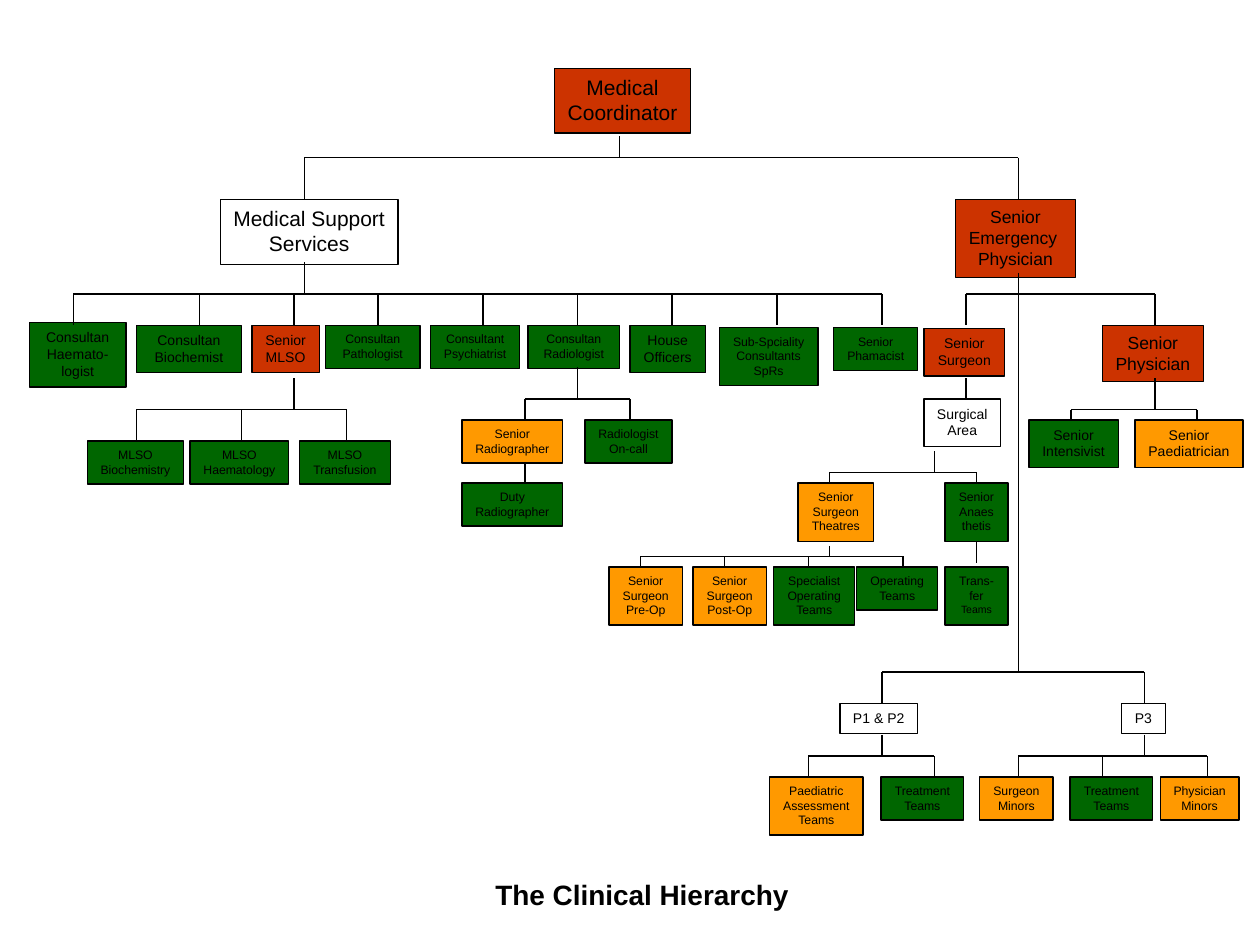
"""Build the clinical hierarchy chart on a grid of 120 columns and 90 rows."""
from lxml import etree
from pptx import Presentation, util as u
from pptx.dml.color import RGBColor
from pptx.enum import shapes, text
from pptx.oxml.ns import qn

COLUMNS, ROWS = 120, 90
BLACK, RED, GREEN, ORANGE = "000000", "CC3300", "006600", "FF9900"
LINE_ROWS, PADDING_ROWS = 0.207, 1.2

presentation = Presentation()
presentation.slide_width, presentation.slide_height = u.Inches(10), u.Inches(7.5)
slide = presentation.slides.add_slide(presentation.slide_layouts[6])
column = presentation.slide_width / COLUMNS
row = presentation.slide_height / ROWS


def color(code):
    return RGBColor.from_string(code)


def write(shape, words, size, wrap, alignment, bold=False):
    frame = shape.text_frame
    frame.text = words
    frame_format = {
        "word_wrap": wrap,
        "auto_size": text.MSO_AUTO_SIZE.SHAPE_TO_FIT_TEXT,
        "vertical_anchor": text.MSO_ANCHOR.TOP,
    }
    for name, value in frame_format.items():
        setattr(frame, name, value)
    for paragraph in frame.paragraphs:
        paragraph.alignment = alignment
        font = paragraph.runs[0].font
        font.color.rgb = color(BLACK)
        for name, value in {"name": "Arial", "size": u.Pt(size), "bold": bold}.items():
            setattr(font, name, value)


boxes = {
    (RED, 12): [(52.8, 6.5, 13, "Medical\nCoordinator")],
    (None, 12): [(21, 19, 16.9, "Medical Support\nServices")],
    (RED, 10): [
        (91, 19, 11.4, "Senior\nEmergency \nPhysician"),
        (105, 31, 9.6, "Senior\nPhysician"),
    ],
    (RED, 8): [(24, 31, 6.4, "Senior\nMLSO"), (88, 31.3, 7.7, "Senior\nSurgeon")],
    (GREEN, 8): [
        (2.8, 30.7, 9.2, "Consultan\nHaemato-logist"),
        (13, 31, 10, "Consultan\nBiochemist"),
        (60, 31, 7.2, "House\nOfficers"),
        (98, 40, 8.5, "Senior\nIntensivist"),
    ],
    (ORANGE, 8): [(108.1, 40, 10.3, "Senior\nPaediatrician")],
    (None, 8): [
        (88, 38, 7.3, "Surgical\nArea"),
        (80, 67, 7.4, "P1 & P2"),
        (106.8, 67, 4.2, "P3"),
    ],
    (ORANGE, 7): [
        (44, 40, 9.6, "Senior\nRadiographer"),
        (76, 46, 7.2, "Senior\nSurgeon\nTheatres"),
        (58, 54, 7, "Senior\nSurgeon\nPre-Op"),
        (66, 54, 7, "Senior\nSurgeon\nPost-Op"),
        (73.3, 74, 8.9, "Paediatric\nAssessment\nTeams"),
        (93.3, 74, 7, "Surgeon\nMinors"),
        (110.5, 74, 7.5, "Physician\nMinors"),
    ],
    (GREEN, 7): [
        (31, 31, 9, "Consultan\nPathologist"),
        (41, 31, 8.5, "Consultant\nPsychiatrist"),
        (50.3, 31, 8.7, "Consultan\nRadiologist"),
        (68.5, 31.2, 9.4, "Sub-Spciality\nConsultants\nSpRs"),
        (79.4, 31.2, 8, "Senior\nPhamacist"),
        (8.3, 42, 9.2, "MLSO\nBiochemistry"),
        (18.1, 42, 9.4, "MLSO\nHaematology"),
        (28.5, 42, 8.7, "MLSO\nTransfusion"),
        (55.7, 40, 8.3, "Radiologist\nOn-call"),
        (44, 46, 9.6, "Duty\nRadiographer"),
        (90, 46, 6, "Senior\nAnaes\nthetis"),
        (73.7, 54, 7.7, "Specialist\nOperating\nTeams"),
        (81.6, 54, 7.7, "Operating\nTeams"),
        (83.9, 74, 7.9, "Treatment\nTeams"),
        (101.9, 74, 7.9, "Treatment\nTeams"),
        (90, 54, 6, "Trans-fer\nTeams"),
    ],
}
wrapped = {
    "Consultan\nHaemato-logist", "Consultan\nBiochemist", "Consultan\nPathologist",
    "Consultan\nRadiologist", "Senior\nAnaes\nthetis", "Trans-fer\nTeams",
}
for (fill, size), group in boxes.items():
    for left, top, width, words in group:
        wrap = words in wrapped
        lines = 1 + words.count("\n") + (words.count("-") if wrap else 0)
        height = PADDING_ROWS + lines * size * LINE_ROWS
        box = slide.shapes.add_shape(
            shapes.MSO_SHAPE.RECTANGLE,
            round(left * column), round(top * row), round(width * column), round(height * row),
        )
        box.shadow.inherit = False
        if fill:
            box.fill.solid()
            box.fill.fore_color.rgb = color(fill)
        else:
            box.fill.background()
        box.line.color.rgb = color(BLACK)
        box.line.width = u.Pt(0.75)
        write(box, words, size, wrap, text.PP_ALIGN.CENTER)
        if words.startswith("Trans-"):
            box.text_frame.paragraphs[-1].runs[0].font.size = u.Pt(6)

branches = [
    (59, 13, 15, [29, 97], 19),
    (29, 25, 28, [7, 19, 28, 36, 46, 55, 64, 74, 84], 31),
    (97, 26, 28, [92, 110], 31),
    (97, 26, 64, [84, 109], 67),
    (28, 36, 39, [13, 23, 33], 42),
    (55, 35, 38, [50, 60], 40),
    (110, 36, 39, [102, 114], 40),
    (89, 43, 45, [79, 93], 46),
    (79, 52, 53, [61, 69, 77, 86], 54),
    (84, 70, 72, [77, 89], 74),
    (109, 70, 72, [97, 105, 115], 74),
]
segments = [(92, 36, 92, 38), (93, 51.6, 93, 53.6), (50, 44, 50, 46)]
for stem, top, bar, children, bottom in branches:
    segments += [(stem, top, stem, bar), (children[0], bar, children[-1], bar)]
    segments += [(child, bar, child, bottom) for child in children]
for start_x, start_y, end_x, end_y in segments:
    connector = slide.shapes.add_connector(
        shapes.MSO_CONNECTOR.STRAIGHT,
        round(start_x * column), round(start_y * row), round(end_x * column), round(end_y * row),
    )
    connector.line.color.rgb = color(BLACK)
    connector.line.width = u.Pt(0.75)
    etree.SubElement(connector._element.spPr, qn("a:effectLst"))

title = slide.shapes.add_textbox(
    round(46 * column), round(83 * row), round(30.5 * column), round(4.4 * row)
)
write(title, "The Clinical Hierarchy", 16, False, text.PP_ALIGN.LEFT, bold=True)

presentation.save("out.pptx")
